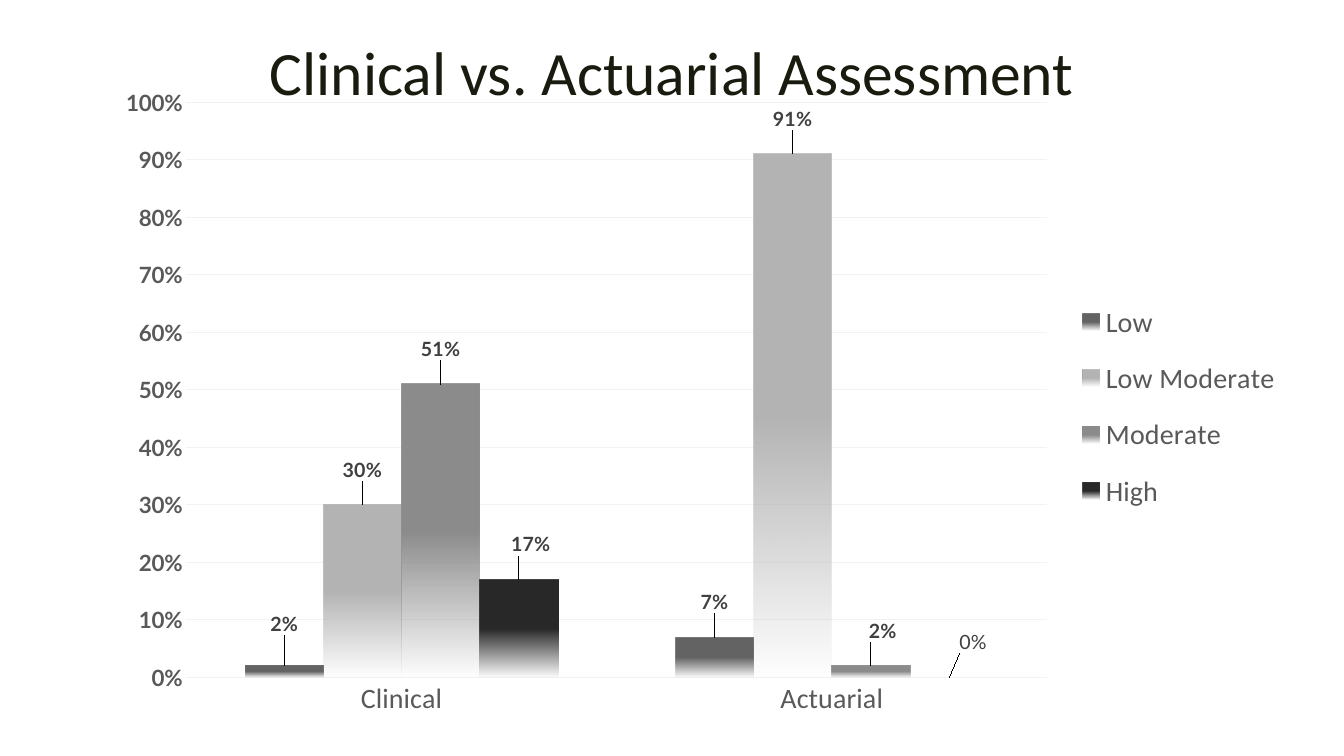
from dataclasses import dataclass

from lxml import etree
from pptx import Presentation
from pptx.chart.data import CategoryChartData
from pptx.dml.color import RGBColor
from pptx.enum.chart import XL_CHART_TYPE as ChartType
from pptx.enum.chart import XL_LABEL_POSITION as LabelPos
from pptx.enum.chart import XL_LEGEND_POSITION as LegendPos
from pptx.enum.chart import XL_TICK_MARK as Tick
from pptx.enum.text import MSO_ANCHOR as Anchor
from pptx.enum.text import PP_ALIGN as Align
from pptx.oxml import parse_xml
from pptx.oxml.ns import nsdecls, qn
from pptx.util import Pt


@dataclass(frozen=True)
class Theme:
    heading: str = "Calibri"
    body: str = "Lato"
    title: str = "191B0E"
    text: str = "595959"
    label: str = "404040"
    grid: str = "F2F2F2"
    title_size: int = 44
    category_size: int = 20
    value_size: int = 16
    label_size: int = 14


# Name, colour, values, and the label shifts as shares of the chart's size
RISK_LEVELS = [
    ("Low", "646464", (0.02, 0.07), ((0, -0.04), (0, -0.03))),
    ("Low Moderate", "B4B4B4", (0.3, 0.91), ((0, -0.03), (0, -0.03))),
    ("Moderate", "8C8C8C", (0.51, 0.02), ((0, -0.03), (0.01, -0.03))),
    ("High", "292929", (0.17, 0), ((0.01, -0.03), (0.02, -0.03))),
]


class SlideBuilder:
    def __init__(self, prs, theme):
        self.theme = theme
        self.s = prs.slides.add_slide(prs.slide_layouts[5])

    def style(self, font, name, size, color, bold=False):
        font.name, font.size, font.bold = name, Pt(size), bold
        font.color.rgb = RGBColor.from_string(color)

    def title(self, text, x, y, w, h):
        t = self.theme
        sp = self.s.shapes.title
        sp.left, sp.top, sp.width, sp.height = Pt(x), Pt(y), Pt(w), Pt(h)
        tf = sp.text_frame
        tf.text = text
        tf.vertical_anchor = Anchor.MIDDLE
        p = tf.paragraphs[0]
        p.alignment, p.line_spacing = Align.CENTER, 0.89
        self.style(p.runs[0].font, t.heading, t.title_size, t.title)

    def layout(self, parent, index, **parts):
        """Place a chart part by shares of the chart's size."""
        for old in parent.findall(qn("c:layout")):
            parent.remove(old)
        layout = parse_xml(f"<c:layout {nsdecls('c')}><c:manualLayout/></c:layout>")
        for tag, value in parts.items():
            etree.SubElement(layout[0], qn(f"c:{tag}")).set("val", str(value))
        parent.insert(index, layout)

    def fade(self, series, color):
        """Fill solid to the middle, then fade out towards the base."""
        sp_pr = series.format.fill._xPr
        sp_pr.insert(0, parse_xml(
            f'<a:gradFill {nsdecls("a")}><a:gsLst>'
            f'<a:gs pos="50000"><a:srgbClr val="{color}"/></a:gs>'
            f'<a:gs pos="100000"><a:srgbClr val="{color}"><a:alpha val="0"/></a:srgbClr></a:gs>'
            '</a:gsLst><a:lin ang="5400000" scaled="0"/></a:gradFill>'))

    def labels(self, series, values, shifts):
        t = self.theme
        labels = series.data_labels
        labels.show_value = True
        labels.number_format, labels.number_format_is_linked = "0%", False
        labels.position = LabelPos.OUTSIDE_END
        self.style(labels.font, t.body, t.label_size, t.label, True)
        for i, (value, (dx, dy)) in enumerate(zip(values, shifts)):
            label = series.points[i].data_label
            label.position = LabelPos.OUTSIDE_END
            self.style(label.font, t.body, t.label_size, t.label, value > 0)
            self.layout(label._dLbl, 1, x=dx, y=dy)

    def axes(self, chart):
        t = self.theme
        cat, val = chart.category_axis, chart.value_axis
        self.style(cat.tick_labels.font, t.heading, t.category_size, t.text)
        self.style(val.tick_labels.font, t.body, t.value_size, t.text, True)
        for axis in (cat, val):
            axis.major_tick_mark = axis.minor_tick_mark = Tick.NONE
            axis.format.line.fill.background()
        val.minimum_scale, val.maximum_scale, val.major_unit = 0, 1, 0.1
        val.tick_labels.number_format = "0%"
        val.tick_labels.number_format_is_linked = False
        line = val.major_gridlines.format.line
        line.width = Pt(0.75)
        line.color.rgb = RGBColor.from_string(t.grid)

    def legend(self, chart):
        t = self.theme
        chart.has_legend = True
        legend = chart.legend
        legend.position, legend.include_in_layout = LegendPos.RIGHT, False
        self.style(legend.font, t.heading, t.category_size, t.text)
        self.layout(legend._element, 1, xMode="edge", yMode="edge",
                    x=0.82, y=0.314, w=0.175, h=0.375)

    def column_chart(self, categories, levels, x, y, w, h):
        data = CategoryChartData(number_format="0%")
        data.categories = categories
        for name, _, values, _ in levels:
            data.add_series(name, values)
        chart = self.s.shapes.add_chart(
            ChartType.COLUMN_CLUSTERED, Pt(x), Pt(y), Pt(w), Pt(h), data).chart
        chart.has_title = False
        self.style(chart.font, self.theme.body, 10, "000000")
        plot = chart.plots[0]
        plot.gap_width, plot.overlap, plot.vary_by_categories = 150, 0, False
        for series, (_, color, values, shifts) in zip(plot.series, levels):
            self.fade(series, color)
            self.labels(series, values, shifts)
        self.axes(chart)
        self.legend(chart)
        plot_area = chart._chartSpace.chart.plotArea
        self.layout(plot_area, 0, layoutTarget="inner", xMode="edge", yMode="edge",
                    x=0.076, y=0.039, w=0.721, h=0.874)


def main():
    prs = Presentation()
    prs.slide_width, prs.slide_height = Pt(960), Pt(540)
    slide = SlideBuilder(prs, Theme())

    # Heading
    slide.title("Clinical vs. Actuarial Assessment", 102.2, 20.2, 756, 68.4)

    # Risk levels by assessment method
    slide.column_chart(["Clinical", "Actuarial"], RISK_LEVELS, 68.4, 54.7, 852.5, 470.2)

    prs.save("out.pptx")


if __name__ == "__main__":
    main()
